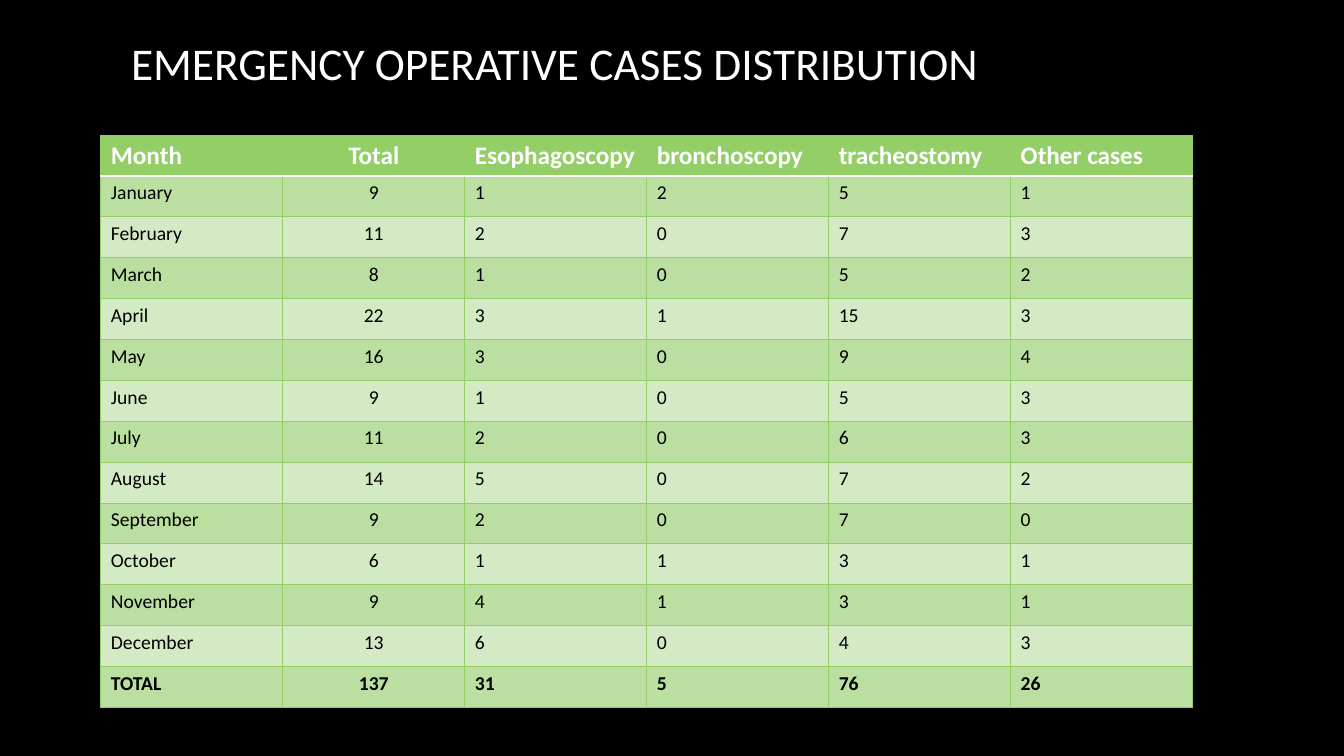
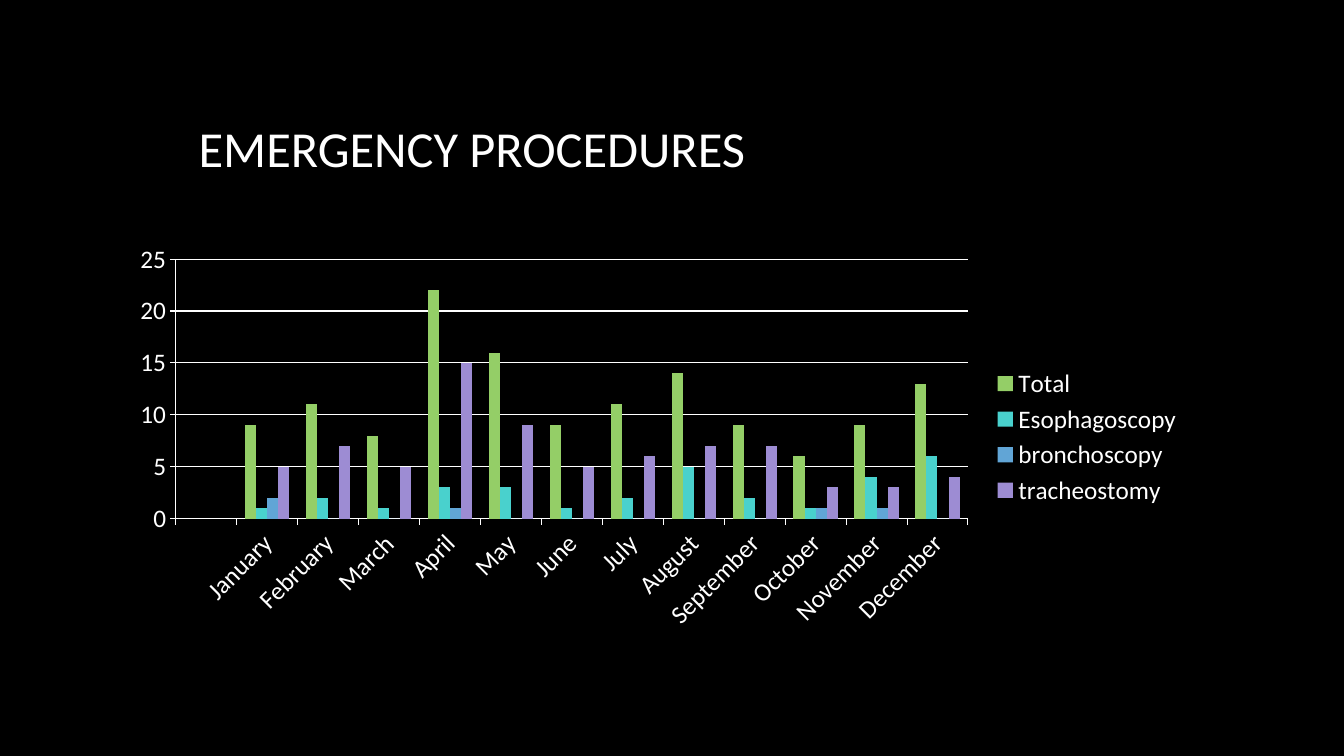
from lxml.etree import SubElement
from pptx import Presentation
from pptx.chart.data import CategoryChartData
from pptx.dml.color import RGBColor
from pptx.enum.chart import XL_CHART_TYPE, XL_LEGEND_POSITION, XL_TICK_MARK
from pptx.enum.text import MSO_ANCHOR, MSO_AUTO_SIZE, PP_ALIGN
from pptx.oxml.ns import qn
from pptx.util import Inches, Pt

BLACK = RGBColor(0x00, 0x00, 0x00)
WHITE = RGBColor(0xFF, 0xFF, 0xFF)
GREEN = RGBColor(0x94, 0xCE, 0x67)
MID = RGBColor(0xBA, 0xDF, 0xA0)
PALE = RGBColor(0xD4, 0xEA, 0xC5)
TEAL = RGBColor(0x49, 0xD1, 0xCD)
BLUE = RGBColor(0x61, 0xA5, 0xD6)
PURPLE = RGBColor(0x9D, 0x8C, 0xD3)

HEADS = ["Month", "Total", "Esophagoscopy", "bronchoscopy", "tracheostomy", "Other cases"]
CASES = [
    ("January", 9, 1, 2, 5, 1),
    ("February", 11, 2, 0, 7, 3),
    ("March", 8, 1, 0, 5, 2),
    ("April", 22, 3, 1, 15, 3),
    ("May", 16, 3, 0, 9, 4),
    ("June", 9, 1, 0, 5, 3),
    ("July", 11, 2, 0, 6, 3),
    ("August", 14, 5, 0, 7, 2),
    ("September", 9, 2, 0, 7, 0),
    ("October", 6, 1, 1, 3, 1),
    ("November", 9, 4, 1, 3, 1),
    ("December", 13, 6, 0, 4, 3),
]
TOTALS = ("TOTAL", 137, 31, 5, 76, 26)


class Deck:
    font = "Calibri"

    def __init__(self):
        self.prs = Presentation()
        self.prs.slide_width = Inches(13.33)
        self.prs.slide_height = Inches(7.5)
        self.slide = None

    def style(self, font, size, color, bold=False):
        font.name = self.font
        font.size = Pt(size)
        font.bold = bold
        font.color.rgb = color

    def add(self, text, box, size):
        """Start a black slide with its title."""
        self.slide = self.prs.slides.add_slide(self.prs.slide_layouts[5])
        back = self.slide.background.fill
        back.solid()
        back.fore_color.rgb = BLACK
        title = self.slide.shapes.title
        title.left, title.top, title.width, title.height = map(Inches, box)
        frame = title.text_frame
        frame.word_wrap = True
        frame.auto_size = MSO_AUTO_SIZE.NONE
        frame.vertical_anchor = MSO_ANCHOR.MIDDLE
        para = frame.paragraphs[0]
        para.alignment = PP_ALIGN.LEFT
        run = para.add_run()
        run.text = text
        self.style(run.font, size, WHITE)

    def edge(self, cell, side, color, width):
        line = SubElement(cell._tc.get_or_add_tcPr(), qn("a:ln" + side), w=str(Pt(width)))
        fill = SubElement(line, qn("a:solidFill"))
        SubElement(fill, qn("a:srgbClr"), val=str(color))

    def cell(self, cell, text, align, fill, size, color, bold, rules):
        for side, (hue, width) in rules.items():
            self.edge(cell, side, hue, width)
        cell.fill.solid()
        cell.fill.fore_color.rgb = fill
        para = cell.text_frame.paragraphs[0]
        para.alignment = align
        run = para.add_run()
        run.text = str(text)
        self.style(run.font, size, color, bold)

    def table(self, rows, box):
        grid = self.slide.shapes.add_table(len(rows), len(rows[0]), *map(Inches, box)).table
        last = len(rows) - 1
        for r, row in enumerate(rows):
            head = r == 0
            fill = GREEN if head else MID if r % 2 else PALE
            rules = dict.fromkeys("LRTB", (GREEN, 0.75))
            if head:
                rules["B"] = (WHITE, 1.5)
            elif r == 1:
                rules["T"] = (WHITE, 1.5)
            for c, text in enumerate(row):
                align = PP_ALIGN.CENTER if c == 1 else PP_ALIGN.LEFT
                self.cell(grid.cell(r, c), text, align, fill, 18 if head else 14,
                          WHITE if head else BLACK, r in (0, last), rules)

    def chart(self, cats, series, box):
        data = CategoryChartData()
        data.categories = cats
        for name, vals, _ in series:
            data.add_series(name, vals)
        chart = self.slide.shapes.add_chart(
            XL_CHART_TYPE.COLUMN_CLUSTERED, *map(Inches, box), data).chart
        self.style(chart.font, 18, WHITE)
        chart.has_title = False
        chart.has_legend = True
        chart.legend.position = XL_LEGEND_POSITION.RIGHT
        chart.legend.include_in_layout = False
        # Columns
        plot = chart.plots[0]
        plot.vary_by_categories = False
        plot.gap_width = 150
        plot.overlap = 0
        for bars, (_, _, color) in zip(plot.series, series):
            bars.format.fill.solid()
            bars.format.fill.fore_color.rgb = color
        # Axes
        for axis in (chart.category_axis, chart.value_axis):
            axis.major_tick_mark = XL_TICK_MARK.OUTSIDE
            self.style(axis.tick_labels.font, 18, WHITE)
            self.rule(axis.format.line)
        value = chart.value_axis
        value.minimum_scale, value.maximum_scale, value.major_unit = 0, 25, 5
        value.has_major_gridlines = True
        self.rule(value.major_gridlines.format.line)
        body = chart.category_axis._element.find(qn("c:txPr")).find(qn("a:bodyPr"))
        body.set("rot", str(-45 * 60000))

    def rule(self, line):
        line.color.rgb = WHITE
        line.width = Pt(0.75)


def main():
    deck = Deck()

    # Monthly table
    deck.add("EMERGENCY OPERATIVE CASES DISTRIBUTION", (1.2, 0.23, 10.63, 0.77), 32.4)
    deck.table([HEADS, *CASES, TOTALS], (1, 1.34, 10.83, 5.68))

    # Procedures chart, with an empty first category
    deck.add("EMERGENCY PROCEDURES", (1.87, 0.67, 9.96, 1.59), 36)
    months, *counts = zip(*CASES)
    hues = (GREEN, TEAL, BLUE, PURPLE)
    series = [(name, (None, *vals), hue) for name, vals, hue in zip(HEADS[1:], counts, hues)]
    deck.chart(["", *months], series, (1.18, 2.34, 10.65, 3.99))

    deck.prs.save("out.pptx")


if __name__ == "__main__":
    main()
